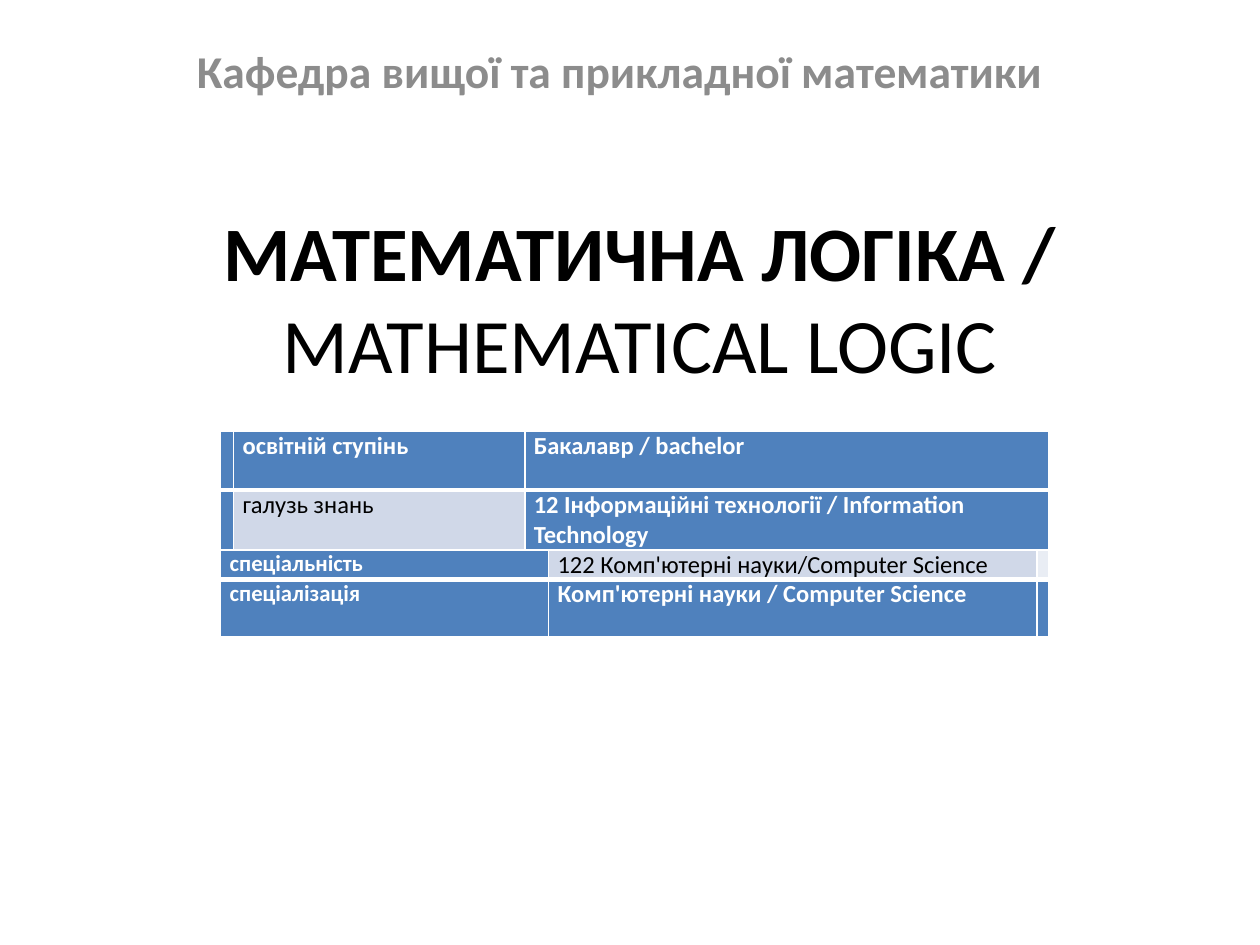
from lxml import etree
from pptx import Presentation
from pptx.dml.color import RGBColor
from pptx.enum.text import MSO_ANCHOR, PP_ALIGN
from pptx.oxml.ns import qn
from pptx.util import Cm, Pt

CENTER = PP_ALIGN.CENTER
MIDDLE = MSO_ANCHOR.MIDDLE
BLACK = RGBColor(0x00, 0x00, 0x00)
WHITE = RGBColor(0xFF, 0xFF, 0xFF)
GRAY = RGBColor(0x8C, 0x8C, 0x8C)
BLUE = RGBColor(0x4F, 0x81, 0xBD)
LIGHT_BLUE = RGBColor(0xD0, 0xD8, 0xE8)
PALE_BLUE = RGBColor(0xE9, 0xED, 0xF4)
FONT = "Calibri"


def format_run(run, size, color, bold):
    run.font.name = FONT
    run.font.size = Pt(size)
    run.font.color.rgb = color
    run.font.bold = bold


def add_borders(cell, top, bottom):
    properties = cell._tc.get_or_add_tcPr()
    widths = {"a:lnL": 1, "a:lnR": 1, "a:lnT": top, "a:lnB": bottom}
    for position, (side, width) in enumerate(widths.items()):
        line = etree.Element(qn(side), w=str(Pt(width)))
        fill = etree.SubElement(line, qn("a:solidFill"))
        etree.SubElement(fill, qn("a:srgbClr"), val=str(WHITE))
        properties.insert(position, line)


presentation = Presentation()
presentation.slide_width = Cm(25.4)
presentation.slide_height = Cm(19.05)
slide = presentation.slides.add_slide(presentation.slide_layouts[0])

# Course title
title = slide.shapes.title
title.left, title.top, title.width, title.height = Cm(2.11), Cm(3.94), Cm(21.59), Cm(4.09)
title.text_frame.vertical_anchor = MIDDLE
paragraph = title.text_frame.paragraphs[0]
paragraph.text = "МАТЕМАТИЧНА ЛОГІКА /\vMATHEMATICAL LOGIC"
paragraph.alignment = CENTER
for run, bold in zip(paragraph.runs, (True, False)):
    format_run(run, 44, BLACK, bold)

# Department
department = slide.placeholders[1]
department.left, department.top, department.width, department.height = Cm(3.71), Cm(0.74), Cm(17.58), Cm(2.21)
paragraph = department.text_frame.paragraphs[0]
paragraph.text = "Кафедра вищої та прикладної математики"
paragraph.alignment = CENTER
format_run(paragraph.runs[0], 26, GRAY, True)

# Programme table: the upper and lower halves split their columns differently
column_widths = (0.26, 5.87, 0.48, 9.84, 0.24)
row_heights = (1.19, 1.2, 0.6, 1.16)
table = slide.shapes.add_table(
    4, 5, Cm(4.45), Cm(8.69), Cm(sum(column_widths)), Cm(sum(row_heights))
).table
for column, width in zip(table.columns, column_widths):
    column.width = Cm(width)
for row, height in zip(table.rows, row_heights):
    row.height = Cm(height)
for row, first, last in ((0, 2, 4), (1, 2, 4), (2, 0, 2), (3, 0, 2)):
    table.cell(row, first).merge(table.cell(row, last))

# Row, column, text, size, fill
entries = (
    (0, 1, "освітній ступінь", 14, BLUE),
    (0, 2, "Бакалавр / bachelor", 14, BLUE),
    (1, 1, "галузь знань", 14, LIGHT_BLUE),
    (1, 2, "12 Інформаційні технології / Information Technology", 14, BLUE),
    (2, 0, "спеціальність", 13, BLUE),
    (2, 3, "122 Комп'ютерні науки/Computer Science", 14, LIGHT_BLUE),
    (2, 4, "", 10, PALE_BLUE),
    (3, 0, "спеціалізація", 13, BLUE),
    (3, 3, "Комп'ютерні науки / Computer Science", 14, BLUE),
)
contents = {(row, column): entry for row, column, *entry in entries}
for row in range(4):
    for column in range(5):
        cell = table.cell(row, column)
        text, size, fill = contents.get((row, column), ("", 10, BLUE))
        cell.margin_left = cell.margin_right = Cm(0.18 if text else 0)
        cell.margin_top = cell.margin_bottom = 0
        cell.fill.solid()
        cell.fill.fore_color.rgb = fill
        add_borders(cell, 3 if row in (1, 3) else 1, 3 if row in (0, 2) else 1)
        paragraph = cell.text_frame.paragraphs[0]
        if text:
            paragraph.text = text
            on_blue = fill == BLUE
            format_run(paragraph.runs[0], size, WHITE if on_blue else BLACK, on_blue)
        else:
            # Small empty text keeps the row at its set height
            etree.SubElement(paragraph._p, qn("a:endParaRPr"), sz=str(size * 100))

presentation.save("out.pptx")
